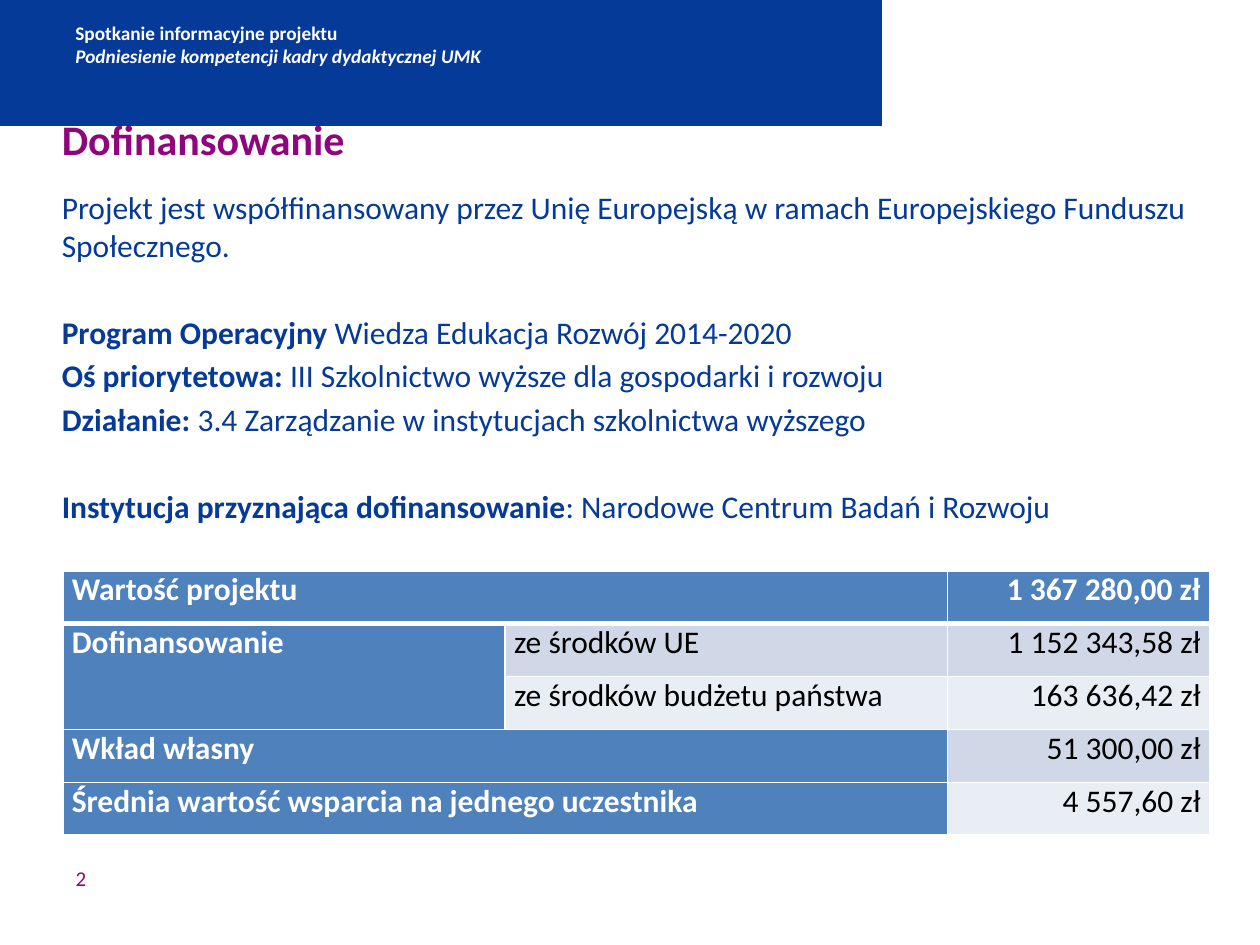
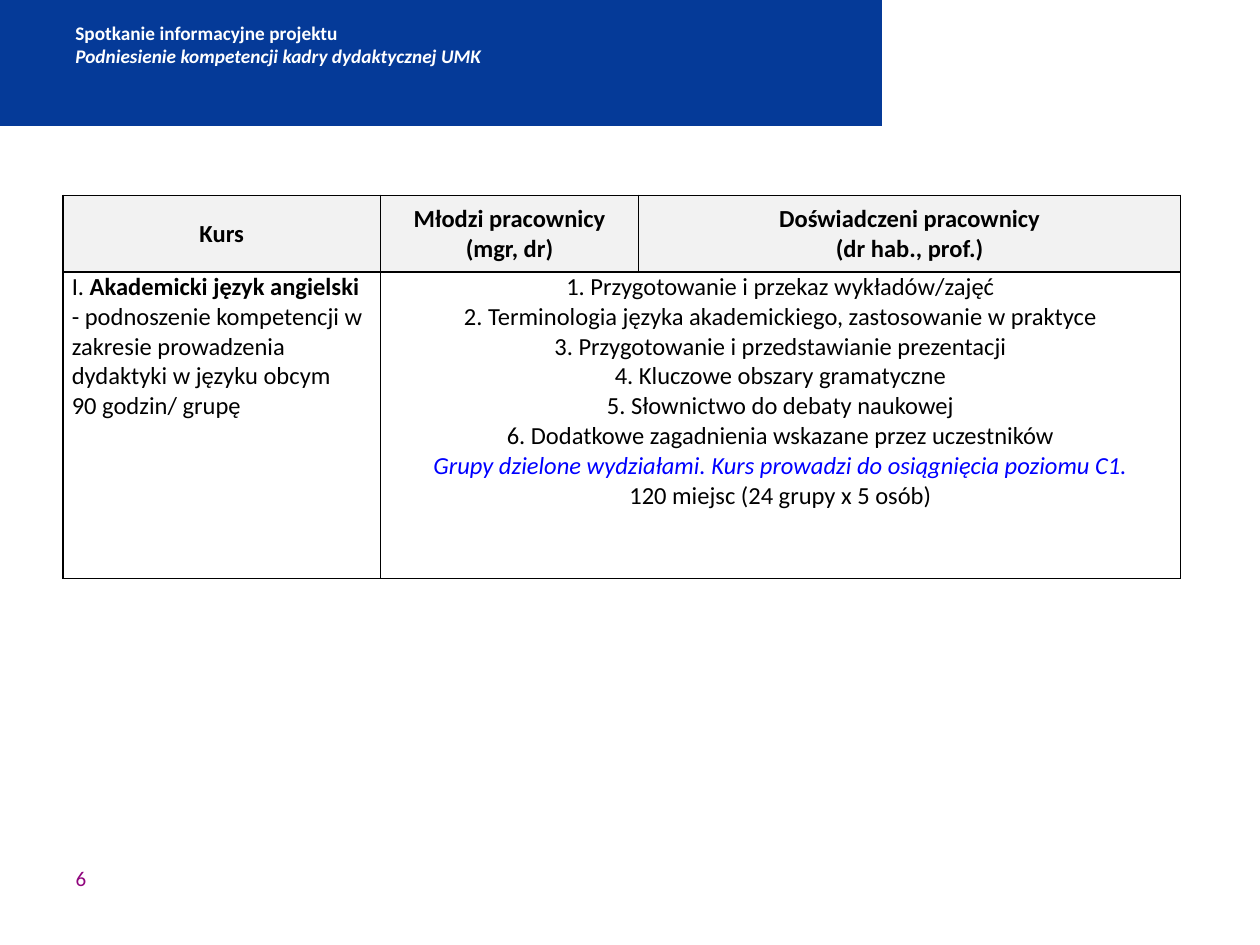
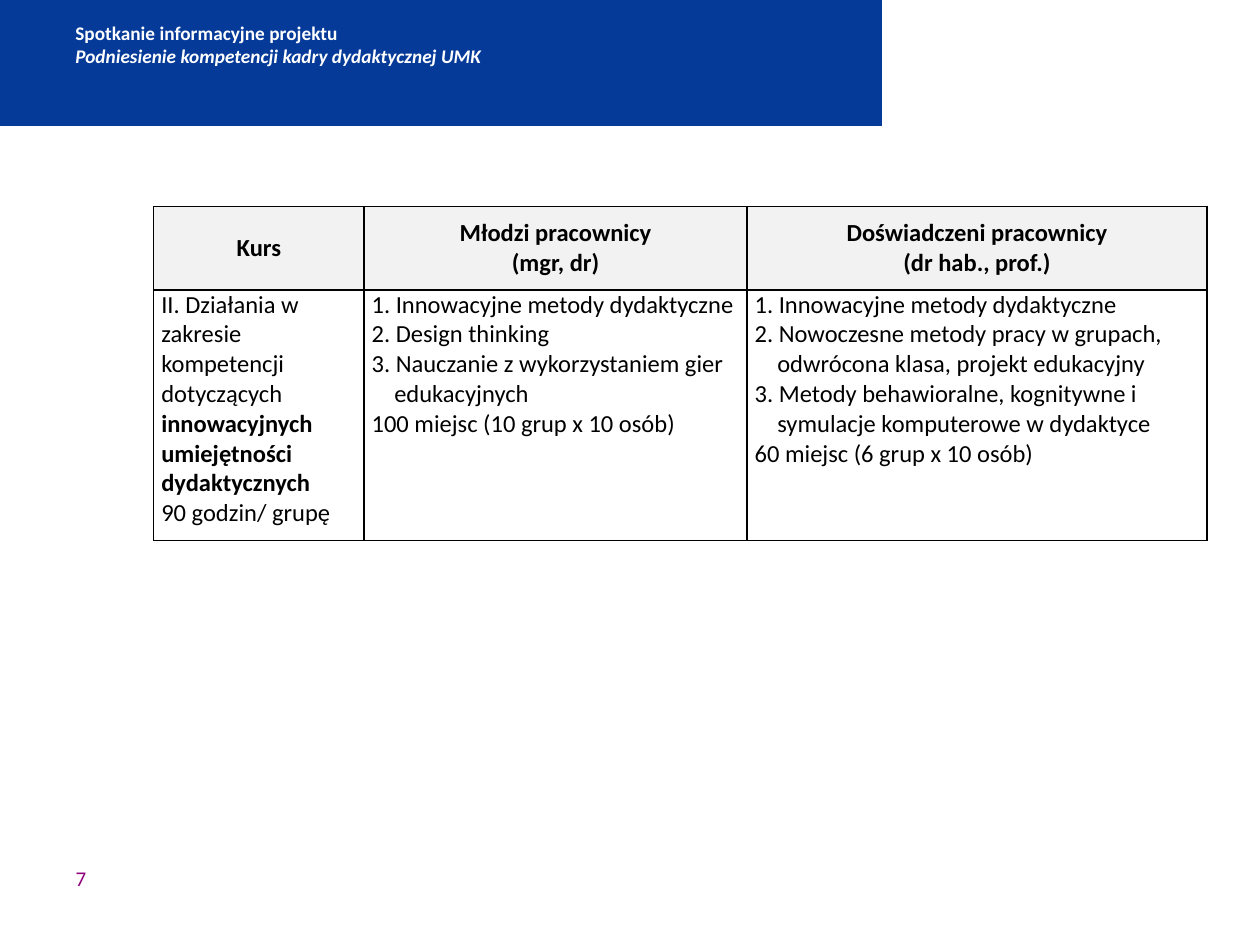
from math import sqrt

from pptx import Presentation
from pptx.dml.color import RGBColor
from pptx.enum.text import MSO_ANCHOR, MSO_AUTO_SIZE, PP_ALIGN
from pptx.oxml.ns import qn
from pptx.util import Inches, Pt
from lxml.etree import SubElement

COLORS = {
    "navy": "053A98", "purple": "90057D", "white": "FFFFFF", "black": "000000",
    "label": "4F81BD", "band_dark": "D0D8E8", "band_light": "E9EDF4",
    "heading": "F2F2F2", "remark": "0000FF",
}
RGB = {name: RGBColor.from_string(value) for name, value in COLORS.items()}
FONT = "Calibri"


def write(frame, lines, size, color, bold=False, align=PP_ALIGN.LEFT, hang=0):
    """Fill a frame with paragraphs; *stars* mark bold, numbered lines may hang."""
    for number, line in enumerate(lines):
        paragraph = frame.paragraphs[0] if number == 0 else frame.add_paragraph()
        paragraph.alignment = align
        paragraph.space_before = Pt(0)
        properties = paragraph._p.get_or_add_pPr()
        indent = Inches(hang) if line[1:2] == "." else 0
        properties.set("marL", str(indent))
        properties.set("indent", str(-indent))
        SubElement(properties, qn("a:buNone"))
        for piece_number, piece in enumerate(line.split("*")):
            if piece:
                run = paragraph.add_run()
                run.text = piece
                run.font.name = FONT
                run.font.size = Pt(size)
                run.font.bold = bold or piece_number % 2 == 1
                run.font.color.rgb = RGB[color]


def add_grid(slide, left, top, widths, heights, border, margin, header_rule=1):
    """Add a table with plain borders and a rule of its own under the first row."""
    table = slide.shapes.add_table(
        len(heights), len(widths), Inches(left), Inches(top),
        Inches(sum(widths)), Inches(sum(heights))).table
    for column, width in zip(table.columns, widths):
        column.width = Inches(width)
    for row_number, height in enumerate(heights):
        table.rows[row_number].height = Inches(height)
        for cell in table.rows[row_number].cells:
            cell.margin_left = cell.margin_right = Inches(margin)
            cell.margin_top = cell.margin_bottom = 0
            for side in "LRTB":
                under_header = (row_number, side) in ((0, "B"), (1, "T"))
                line = SubElement(cell._tc.get_or_add_tcPr(), qn(f"a:ln{side}"),
                                  w=str(Pt(header_rule if under_header else 1)))
                fill = SubElement(line, qn("a:solidFill"))
                SubElement(fill, qn("a:srgbClr"), val=COLORS[border])
    return table


deck = Presentation()
deck.slide_width, deck.slide_height = Inches(10), Inches(7.5)
TITLE_AND_CONTENT, BLANK = deck.slide_layouts[1], deck.slide_layouts[6]

# Shared frame: band with a round cut-out, running header, page number
BAND_HEIGHT = 0.7
CUT_X, CUT_Y, CUT_RADIUS = 7.74, 0.47, 0.61
CUT_STEPS = 28
cut_edge = []
for step in range(CUT_STEPS + 1):
    y = BAND_HEIGHT * (1 - step / CUT_STEPS)
    cut_edge.append((CUT_X - sqrt(CUT_RADIUS ** 2 - (y - CUT_Y) ** 2), y))

slides = []
for page, layout in ((2, TITLE_AND_CONTENT), (6, BLANK), (7, BLANK)):
    slide = deck.slides.add_slide(layout)
    slides.append(slide)

    outline = slide.shapes.build_freeform(0, 0, scale=Inches(1))
    outline.add_line_segments([(0, BAND_HEIGHT), *cut_edge])
    band = outline.convert_to_shape()
    band.shadow.inherit = False
    band.fill.solid()
    band.fill.fore_color.rgb = RGB["navy"]
    band.line.fill.background()

    header = slide.shapes.add_textbox(
        Inches(0.5), Inches(0.12), Inches(6.43), Inches(0.47)).text_frame
    header.word_wrap = True
    write(header, ["Spotkanie informacyjne projektu",
                   "Podniesienie kompetencji kadry dydaktycznej UMK"],
          11, "white", bold=True)
    header.paragraphs[1].runs[0].font.italic = True

    page_number = slide.shapes.add_textbox(
        Inches(0.6), Inches(6.65), Inches(0.46), Inches(0.43)).text_frame
    page_number.word_wrap = True
    page_number.margin_left = page_number.margin_right = page_number.margin_top = 0
    write(page_number, [str(page)], 12, "purple")
    page_number.paragraphs[0].line_spacing = Pt(30)

funding, english_course, skills_course = slides

# Funding: title and description
title, description = funding.shapes.title, funding.placeholders[1]
for holder, (left, top, width, height) in (
        (title, (0.39, 0.85, 6.42, 0.59)), (description, (0.39, 1.44, 9.21, 5.87))):
    holder.left, holder.top = Inches(left), Inches(top)
    holder.width, holder.height = Inches(width), Inches(height)
    holder.text_frame.auto_size = MSO_AUTO_SIZE.NONE
    holder.text_frame.vertical_anchor = MSO_ANCHOR.TOP
write(title.text_frame, ["Dofinansowanie"], 24, "purple", bold=True)
write(description.text_frame, [
    "Projekt jest współfinansowany przez Unię Europejską w ramach "
    "Europejskiego Funduszu Społecznego.",
    "*Program Operacyjny* Wiedza Edukacja Rozwój 2014-2020",
    "*Oś priorytetowa:* III Szkolnictwo wyższe dla gospodarki i rozwoju",
    "*Działanie:* 3.4 Zarządzanie w instytucjach szkolnictwa wyższego",
    "*Instytucja przyznająca dofinansowanie*: Narodowe Centrum Badań i Rozwoju",
], 18, "navy")
LINE_GAP, GROUP_GAP = 3.2, 28.3
for paragraph, gap in zip(description.text_frame.paragraphs,
                          (0, GROUP_GAP, LINE_GAP, LINE_GAP, GROUP_GAP)):
    paragraph.space_before = Pt(gap)

# Funding: amounts
amounts = [
    ("Wartość projektu", "", "1 367 280,00 zł"),
    ("Dofinansowanie", "ze środków UE", "1 152 343,58 zł"),
    ("", "ze środków budżetu państwa", "163 636,42 zł"),
    ("Wkład własny", "", "51 300,00 zł"),
    ("Średnia wartość wsparcia na jednego uczestnika", "", "4 557,60 zł"),
]
budget = add_grid(funding, 0.5, 4.53, [3.51, 3.51, 2.08], [0.42] * len(amounts),
                  "white", 0.07, header_rule=3)
for row_number in (0, 3, 4):
    budget.cell(row_number, 0).merge(budget.cell(row_number, 1))
budget.cell(1, 0).merge(budget.cell(2, 0))
for row_number, texts in enumerate(amounts):
    for column_number, text in enumerate(texts):
        cell = budget.cell(row_number, column_number)
        is_label = row_number == 0 or column_number == 0
        band_color = "band_dark" if row_number % 2 else "band_light"
        cell.fill.solid()
        cell.fill.fore_color.rgb = RGB["label" if is_label else band_color]
        if text:
            # Amounts keep their digit groups and currency on one line
            shown = text.replace(" ", "\N{NO-BREAK SPACE}") if column_number == 2 else text
            write(cell.text_frame, [shown], 18, "white" if is_label else "black",
                  bold=is_label,
                  align=PP_ALIGN.RIGHT if column_number == 2 else PP_ALIGN.LEFT)

# Courses: one table per slide under the same headings
headings = [["Kurs"], ["Młodzi pracownicy", "(mgr, dr)"],
            ["Doświadczeni pracownicy", "(dr hab., prof.)"]]
english_topics = [
    "1. Przygotowanie i przekaz wykładów/zajęć",
    "2. Terminologia języka akademickiego, zastosowanie w praktyce",
    "3. Przygotowanie i przedstawianie prezentacji",
    "4. Kluczowe obszary gramatyczne",
    "5. Słownictwo do debaty naukowej",
    "6. Dodatkowe zagadnienia wskazane przez uczestników",
    "Grupy dzielone wydziałami. Kurs prowadzi do osiągnięcia poziomu C1.",
    "120 miejsc (24 grupy x 5 osób)",
]
english = add_grid(english_course, 0.5, 1.55, [2.52, 2.05, 4.3], [0.61, 2.43],
                   "black", 0.07)
english.cell(1, 1).merge(english.cell(1, 2))
skills = add_grid(skills_course, 1.22, 1.64, [1.67, 3.04, 3.65], [0.66, 1.99],
                  "black", 0.06)
courses = [
    (english, PP_ALIGN.CENTER, 0, [
        ["I. *Akademicki język angielski* - podnoszenie kompetencji w zakresie "
         "prowadzenia dydaktyki w języku obcym", "90 godzin/ grupę"],
        english_topics,
        [],
    ]),
    (skills, PP_ALIGN.LEFT, 0.18, [
        ["II. Działania w zakresie kompetencji dotyczących "
         "*innowacyjnych umiejętności dydaktycznych*", "90 godzin/ grupę"],
        ["1. Innowacyjne metody dydaktyczne",
         "2. Design thinking",
         "3. Nauczanie z wykorzystaniem gier edukacyjnych",
         "100 miejsc (10 grup x 10 osób)"],
        ["1. Innowacyjne metody dydaktyczne",
         "2. Nowoczesne metody pracy w grupach, odwrócona klasa, projekt edukacyjny",
         "3. Metody behawioralne, kognitywne i symulacje komputerowe w dydaktyce",
         "60 miejsc (6 grup x 10 osób)"],
    ]),
]
for course, topic_align, hang, contents in courses:
    for column_number, (heading, lines) in enumerate(zip(headings, contents)):
        heading_cell = course.cell(0, column_number)
        heading_cell.fill.solid()
        heading_cell.fill.fore_color.rgb = RGB["heading"]
        heading_cell.vertical_anchor = MSO_ANCHOR.MIDDLE
        write(heading_cell.text_frame, heading, 14, "black", bold=True,
              align=PP_ALIGN.CENTER)

        content_cell = course.cell(1, column_number)
        content_cell.fill.background()
        # Only numbered topics hang; the course name starts flush left
        write(content_cell.text_frame, lines, 14, "black",
              align=topic_align if column_number else PP_ALIGN.LEFT,
              hang=hang if column_number else 0)

remark = english.cell(1, 1).text_frame.paragraphs[6].runs[0].font
remark.italic = True
remark.color.rgb = RGB["remark"]

deck.save("out.pptx")
